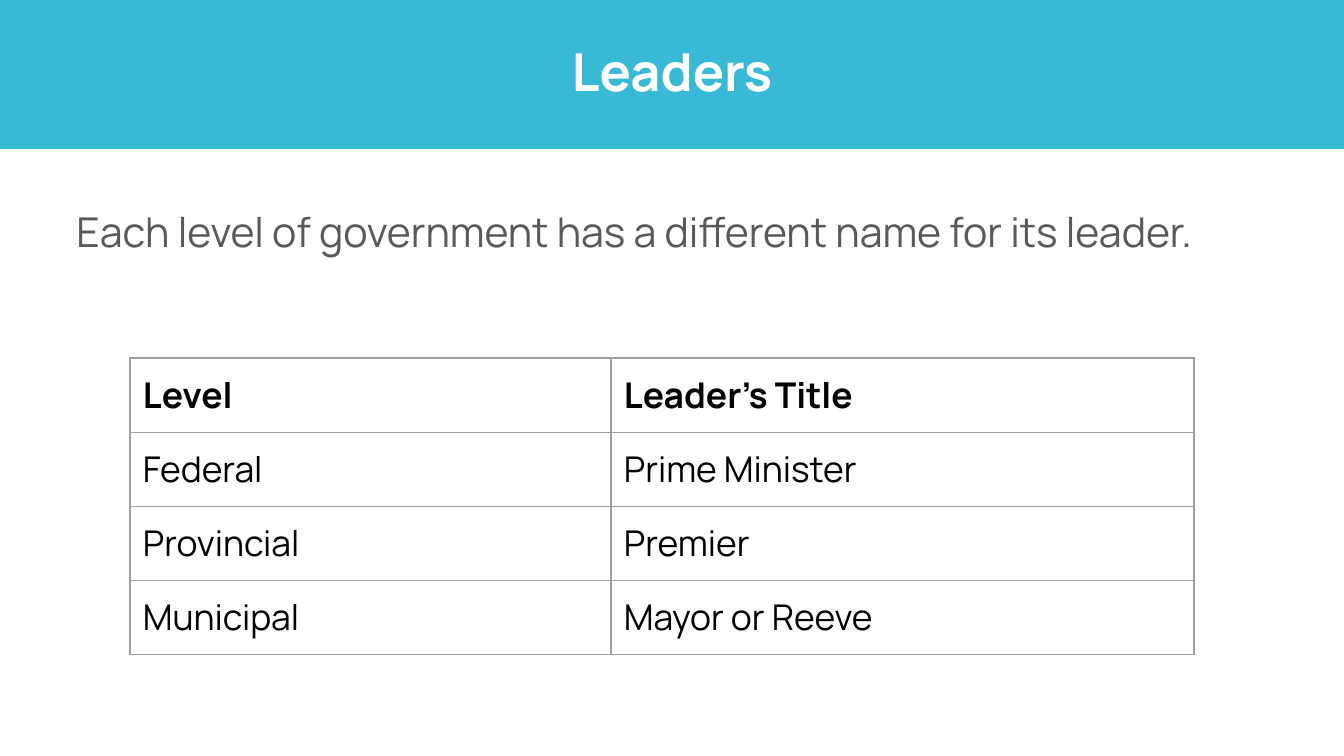
from lxml.etree import SubElement
from pptx import Presentation
from pptx.dml.color import RGBColor
from pptx.enum.text import MSO_ANCHOR, MSO_AUTO_SIZE, PP_ALIGN
from pptx.oxml.ns import qn
from pptx.util import Emu, Pt

WHITE = RGBColor(0xFF, 0xFF, 0xFF)
BLACK = RGBColor(0x00, 0x00, 0x00)
GRAY = RGBColor(0x59, 0x59, 0x59)
BORDER_GRAY = RGBColor(0x9E, 0x9E, 0x9E)
BANNER_BLUE = RGBColor(0x38, 0xB9, 0xD5)

SLIDE_WIDTH, SLIDE_HEIGHT = 1344, 756
LEADERS = [
    ("Level", "Leader’s Title"),
    ("Federal", "Prime Minister"),
    ("Provincial", "Premier"),
    ("Municipal", "Mayor or Reeve"),
]


def px(length):
    return Emu(round(length * 914400 / 134.4))


class SlideBuilder:
    font_name = "Manrope"

    def __init__(self, slide):
        self.slide = slide

    def place(self, shape, left, top, width, height):
        shape.left, shape.top = px(left), px(top)
        shape.width, shape.height = px(width), px(height)

    def format_runs(self, paragraph, size, color, bold=False):
        for run in paragraph.runs:
            run.font.name = self.font_name
            run.font.size = Pt(size)
            run.font.bold = bold
            run.font.color.rgb = color

    def title(self, text, height):
        banner = self.slide.shapes.title
        self.place(banner, 0, 0, SLIDE_WIDTH, height)
        banner.fill.solid()
        banner.fill.fore_color.rgb = BANNER_BLUE
        frame = banner.text_frame
        frame.text = text
        frame.auto_size = MSO_AUTO_SIZE.NONE
        frame.vertical_anchor = MSO_ANCHOR.MIDDLE
        heading = frame.paragraphs[0]
        heading.alignment = PP_ALIGN.CENTER
        heading.line_spacing = 0.9
        self.format_runs(heading, 28, WHITE, bold=True)

    def body(self, text, left, top, width, height):
        body = self.slide.placeholders[1]
        self.place(body, left, top, width, height)
        frame = body.text_frame
        frame.text = text
        frame.auto_size = MSO_AUTO_SIZE.NONE
        intro = frame.paragraphs[0]
        intro.line_spacing = 1.15
        intro.space_before = Pt(0)
        properties = intro._p.get_or_add_pPr()
        properties.set("marL", "0")
        properties.set("indent", "0")
        SubElement(properties, qn("a:buNone"))
        self.format_runs(intro, 22, GRAY)

    def cell_borders(self, cell):
        properties = cell._tc.get_or_add_tcPr()
        for side in ("lnL", "lnR", "lnT", "lnB"):
            line = SubElement(properties, qn(f"a:{side}"), w=str(Pt(0.75)))
            fill = SubElement(line, qn("a:solidFill"))
            SubElement(fill, qn("a:srgbClr"), val=str(BORDER_GRAY))

    def table(self, rows, left, top, column_widths, row_height):
        table = self.slide.shapes.add_table(
            len(rows), len(column_widths), px(left), px(top),
            px(sum(column_widths)), px(row_height * len(rows)),
        ).table
        table.first_row = table.horz_banding = False
        for column, width in zip(table.columns, column_widths):
            column.width = px(width)
        for row_index, row in enumerate(rows):
            for column_index, text in enumerate(row):
                cell = table.cell(row_index, column_index)
                self.cell_borders(cell)
                cell.fill.background()
                cell.margin_left = cell.margin_right = px(13)
                cell.margin_top = cell.margin_bottom = px(13)
                cell.text_frame.text = text
                self.format_runs(cell.text_frame.paragraphs[0], 19, BLACK,
                                 bold=row_index == 0)


def main():
    presentation = Presentation()
    presentation.slide_width = px(SLIDE_WIDTH)
    presentation.slide_height = px(SLIDE_HEIGHT)
    builder = SlideBuilder(
        presentation.slides.add_slide(presentation.slide_layouts[1]))
    builder.title("Leaders", height=149)
    builder.body("Each level of government has a different name for its leader.",
                 63, 192, 1159, 489)
    builder.table(LEADERS, 130, 358, column_widths=(481, 583), row_height=68)
    presentation.save("out.pptx")


if __name__ == "__main__":
    main()
